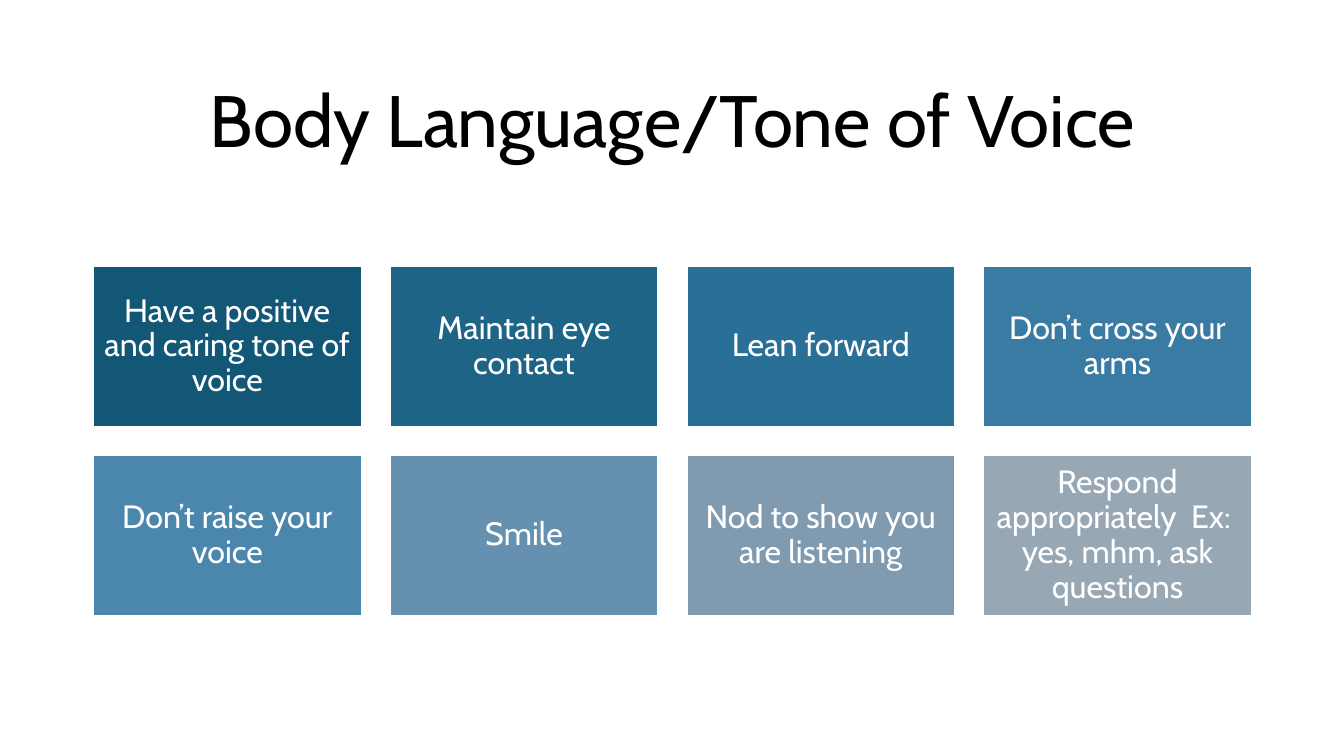
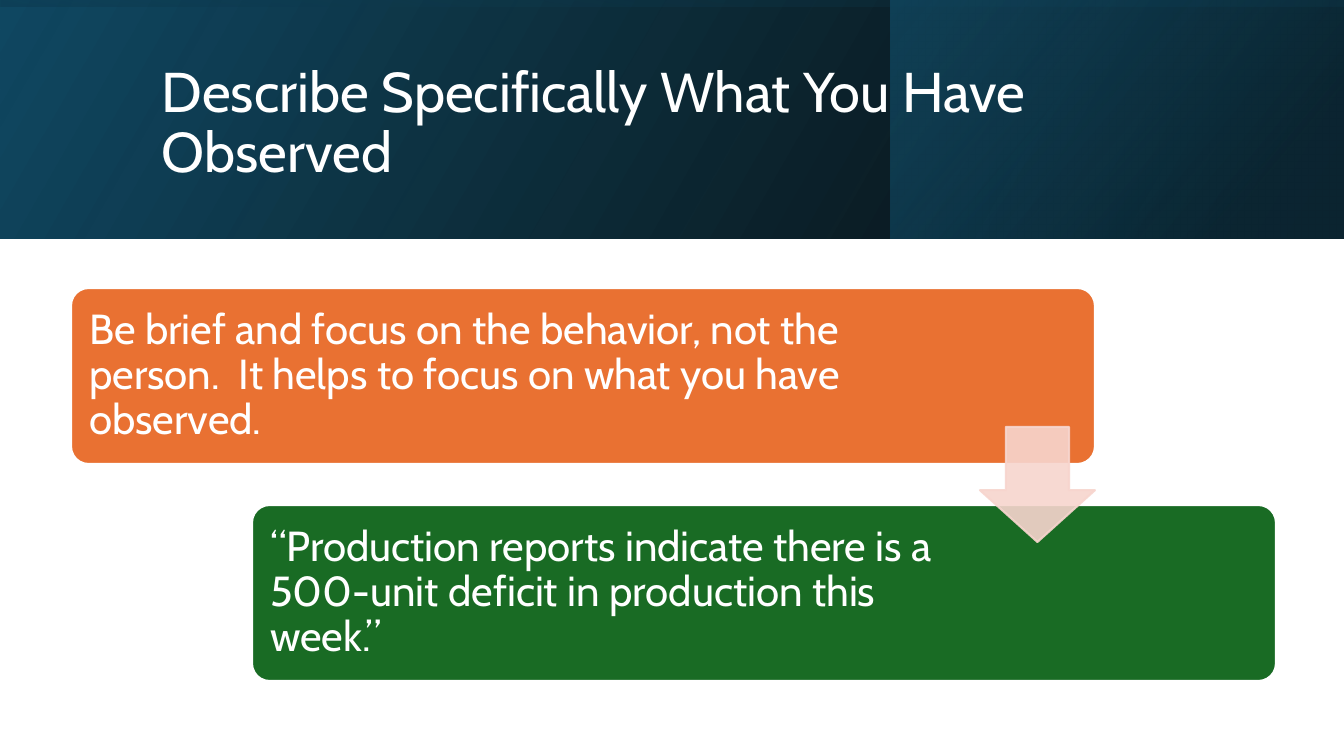
from lxml.etree import SubElement
from pptx import Presentation
from pptx.dml.color import RGBColor
from pptx.enum.shapes import MSO_SHAPE
from pptx.enum.text import MSO_ANCHOR, PP_ALIGN
from pptx.oxml.ns import qn
from pptx.util import Pt

# Shared scale, font and colours
WIDE, HIGH = 1344, 756
SCALE = 12192000 / WIDE
FONT = "Cabin"
WHITE = RGBColor(0xFF, 0xFF, 0xFF)
BLACK = RGBColor(0x00, 0x00, 0x00)
NAVY = RGBColor(0x10, 0x48, 0x62)
DEEP = RGBColor(0x0B, 0x30, 0x41)
TEAL = RGBColor(0x15, 0x60, 0x82)
ORANGE = RGBColor(0xE9, 0x71, 0x32)
GREEN = RGBColor(0x19, 0x6B, 0x24)
PINK = RGBColor(0xF7, 0xD5, 0xCE)

TILES = [
    ("Have a positive and caring tone of voice", RGBColor(0x13, 0x57, 0x76)),
    ("Maintain eye contact", RGBColor(0x1E, 0x64, 0x87)),
    ("Lean forward", RGBColor(0x2A, 0x70, 0x96)),
    ("Don’t cross your arms", RGBColor(0x3A, 0x7B, 0xA3)),
    ("Don’t raise your voice", RGBColor(0x4B, 0x86, 0xAD)),
    ("Smile", RGBColor(0x65, 0x90, 0xAF)),
    ("Nod to show you are listening", RGBColor(0x80, 0x9B, 0xB0)),
    ("Respond appropriately  Ex:  yes, mhm, ask questions",
     RGBColor(0x98, 0xA7, 0xB4)),
]

# Text, fill and the space kept free on the right
CARDS = [
    ("Be brief and focus on the behavior, not the person.  "
     "It helps to focus on what you have observed.", ORANGE, 185),
    ("“Production reports indicate there is a 500-unit deficit "
     "in production this week.”", GREEN, 308),
]


def px(num):
    return round(num * SCALE)


def write(shape, text, size, color, align, pads):
    frame = shape.text_frame
    frame.word_wrap = True
    frame.vertical_anchor = MSO_ANCHOR.MIDDLE
    (frame.margin_left, frame.margin_top,
     frame.margin_right, frame.margin_bottom) = map(px, pads)
    para = frame.paragraphs[0]
    para.alignment = align
    para.line_spacing = 0.9
    run = para.add_run()
    run.text = text
    run.font.name = FONT
    run.font.size = Pt(size)
    run.font.color.rgb = color


def title(slide, box, text, size, color, align):
    shape = slide.shapes.add_textbox(*map(px, box))
    write(shape, text, size, color, align, (10, 5, 10, 5))


def block(slide, kind, box, fill, line=WHITE):
    shape = slide.shapes.add_shape(kind, *map(px, box))
    shape.shadow.inherit = False
    shape.fill.solid()
    shape.fill.fore_color.rgb = fill
    shape.line.color.rgb = line
    shape.line.width = Pt(1.5)
    return shape


def fade(shape, *levels):
    """Give each colour of the shape its opacity in percent."""
    colors = shape._element.spPr.iter(qn("a:srgbClr"))
    for color, level in zip(list(colors), levels):
        SubElement(color, qn("a:alpha")).set("val", str(level * 1000))


def blend(slide, box, angle, stops, turn=0):
    """Add a mirrored rectangle with a two-colour gradient."""
    shape = slide.shapes.add_shape(MSO_SHAPE.RECTANGLE, *map(px, box))
    shape.shadow.inherit = False
    shape.line.fill.background()
    shape.rotation = turn
    shape._element.spPr.xfrm.set("flipH", "1")
    shape.fill.gradient()
    shape.fill.gradient_angle = 360 - angle
    for stop, (place, color, _) in zip(shape.fill.gradient_stops, stops):
        stop.position = place
        stop.color.rgb = color
    fade(shape, *(level for _, _, level in stops))


def band(slide, box):
    left, top, wide, high = box
    blend(slide, box, 330, [(0, BLACK, 96), (1, NAVY, 100)])
    # Lighter panel on the right
    start = 891
    blend(slide, (left + start, top, wide - start - 1, high), 320,
          [(0.19, DEEP, 68), (1, TEAL, 48)])
    # Shade over the whole band, a tall box turned on its side
    shift = (wide - high) / 2
    blend(slide, (left + shift, top - shift, high, wide), 350,
          [(0.23, NAVY, 16), (0.99, BLACK, 45)], turn=270)


def grid(slide, box, cols=4, gap=28):
    left, top, wide, high = box
    rows = len(TILES) // cols
    cell = (wide - gap * (cols - 1)) / cols
    tall = (high - gap * (rows - 1)) / rows
    for num, (text, fill) in enumerate(TILES):
        row, col = divmod(num, cols)
        spot = (left + col * (cell + gap), top + row * (tall + gap),
                cell, tall)
        shape = block(slide, MSO_SHAPE.RECTANGLE, spot, fill)
        write(shape, text, 23, WHITE, PP_ALIGN.CENTER, (10, 10, 10, 10))


def steps(slide, box, wide=1024, high=176, size=115):
    left, top, span, tall = box
    for num, (text, fill, free) in enumerate(CARDS):
        spot = (left + num * (span - wide), top + num * (tall - high),
                wide, high)
        card = block(slide, MSO_SHAPE.ROUNDED_RECTANGLE, spot, fill)
        card.adjustments[0] = 0.1
        write(card, text, 30, WHITE, PP_ALIGN.LEFT, (13, 12, free, 12))
    # Arrow centred on the gap, flush with the first card
    spot = (left + wide - size, top + (tall - size) / 2, size, size)
    arrow = block(slide, MSO_SHAPE.DOWN_ARROW, spot, PINK, PINK)
    arrow.adjustments[0] = 0.55
    arrow.adjustments[1] = 0.45
    fade(arrow, 90, 90)


def main():
    deck = Presentation()
    deck.slide_width, deck.slide_height = px(WIDE), px(HIGH)
    blank = deck.slide_layouts[6]

    # Tiles
    slide = deck.slides.add_slide(blank)
    title(slide, (93, 61, 1159, 125), "Body Language/Tone of Voice",
          52, BLACK, PP_ALIGN.CENTER)
    grid(slide, (93, 266, 1159, 350))

    # Steps
    slide = deck.slides.add_slide(blank)
    band(slide, (0, 0, WIDE, 239))
    title(slide, (152, 38, 1072, 173),
          "Describe Specifically What You Have Observed",
          40, WHITE, PP_ALIGN.LEFT)
    steps(slide, (71, 288, 1205, 393))

    deck.save("out.pptx")


if __name__ == "__main__":
    main()
